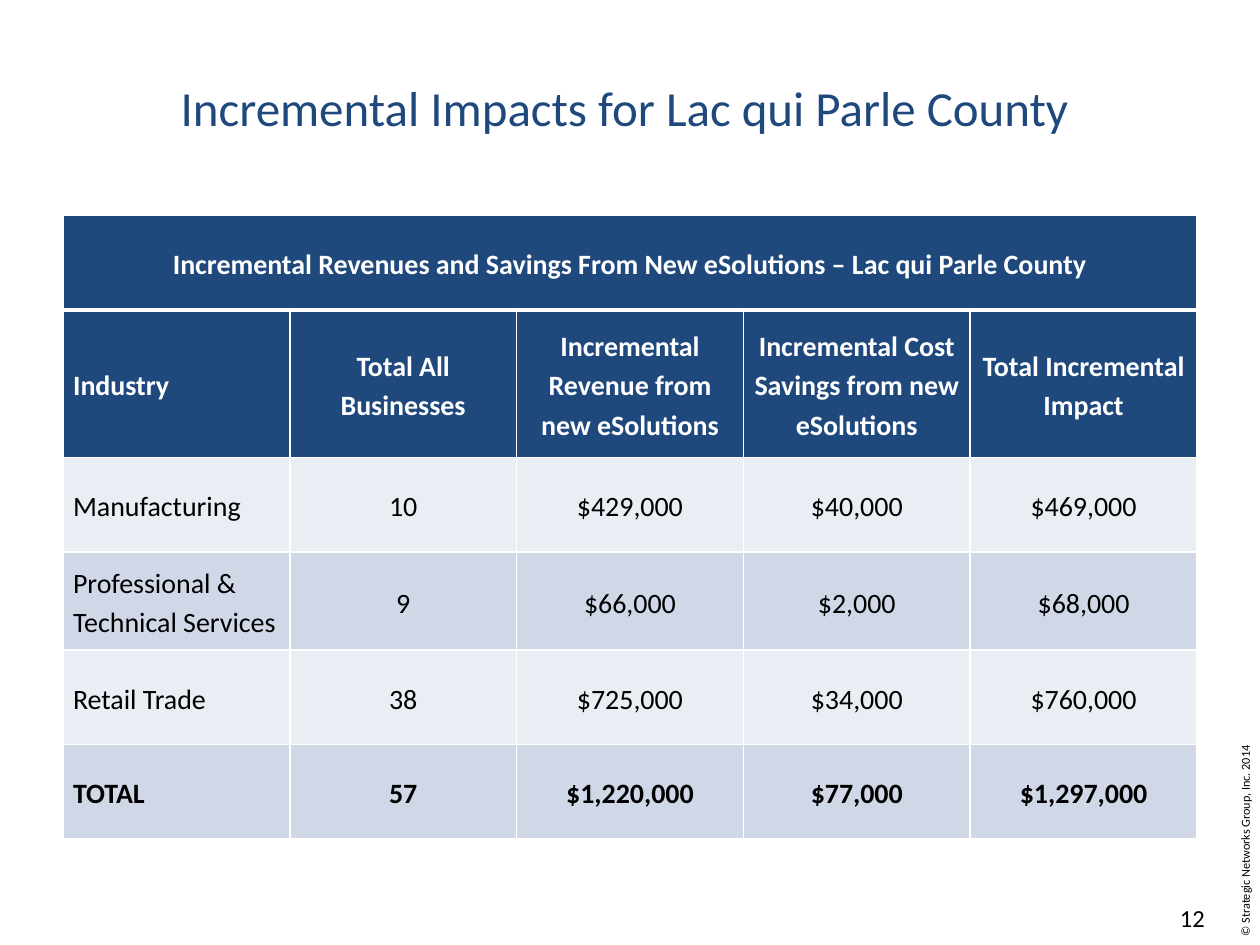
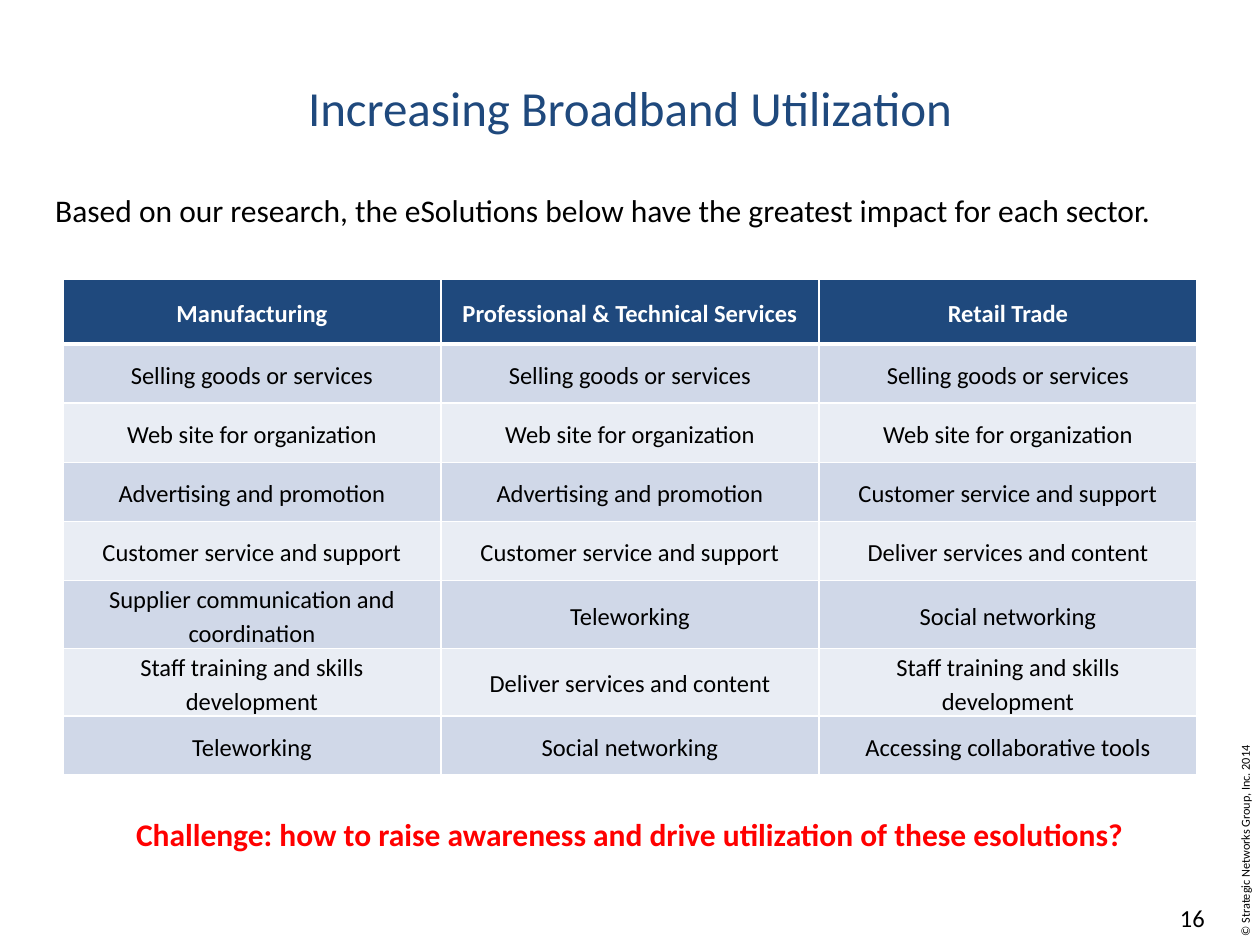
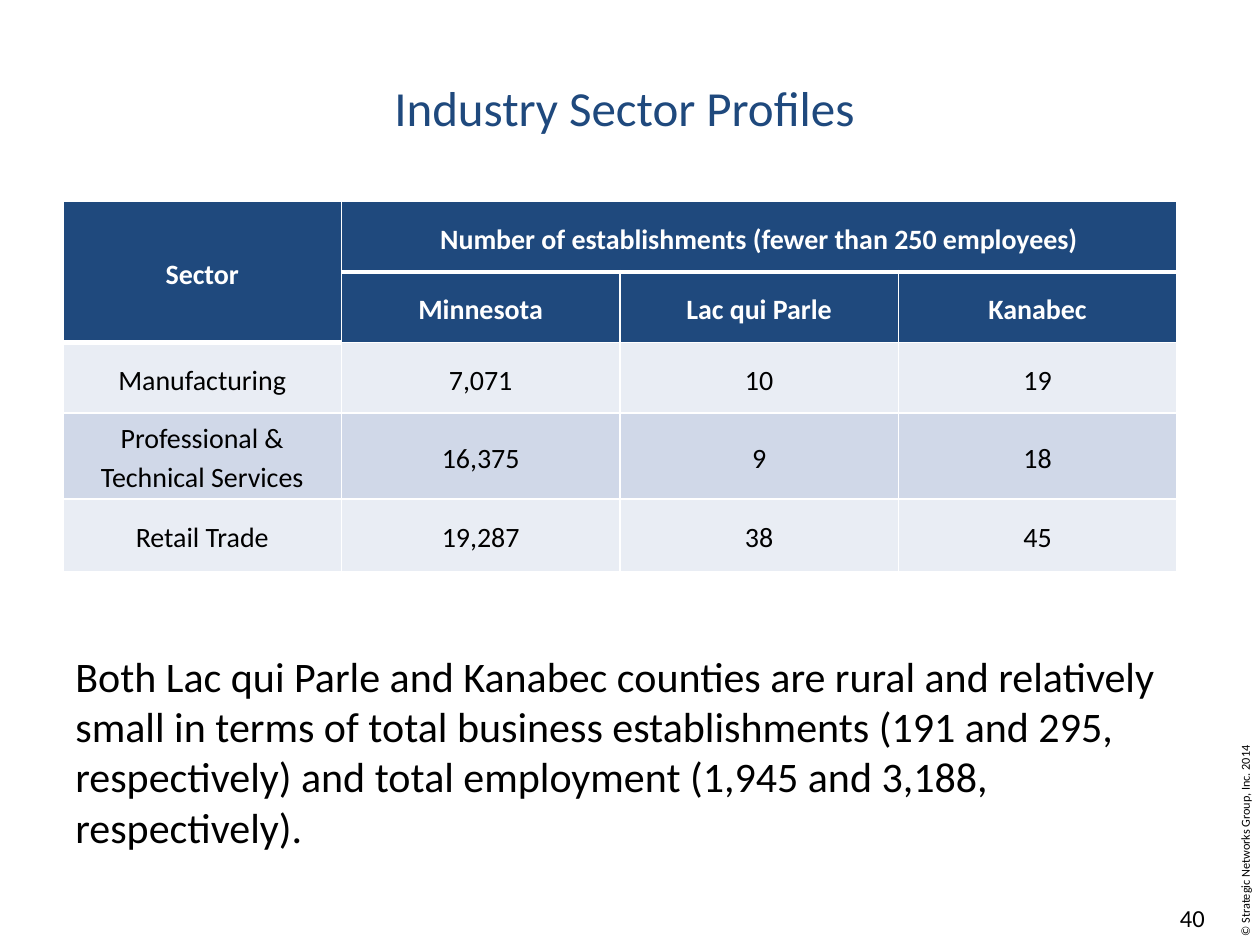
from pptx import Presentation
from pptx.dml.color import RGBColor
from pptx.enum import text as t
from pptx.oxml import parse_xml
from pptx.oxml.ns import nsdecls
from pptx.util import Inches, Pt

NAVY = RGBColor(0x1F, 0x49, 0x7D)
LIGHT = RGBColor(0xE9, 0xED, 0xF4)
DARK = RGBColor(0xD0, 0xD8, 0xE8)
WHITE = RGBColor(0xFF, 0xFF, 0xFF)
BLACK = RGBColor(0, 0, 0)
RED = RGBColor(0xFF, 0, 0)
FONT = "Calibri"
LEFT, MID, RIGHT = t.PP_ALIGN.LEFT, t.PP_ALIGN.CENTER, t.PP_ALIGN.RIGHT


class Deck:
    def __init__(self):
        self.prs = Presentation()
        self.prs.slide_width, self.prs.slide_height = Inches(10), Inches(7.5)
        self.slide = None

    def put(self, frame, words, size, color=BLACK, bold=False, align=LEFT):
        para = frame.paragraphs[0]
        para.alignment = align
        run = para.add_run()
        run.text = words
        font = run.font
        font.name, font.size, font.bold = FONT, Pt(size), bold
        font.color.rgb = color
        return para

    def label(self, words, box, size, wrap=True, **style):
        shape = self.slide.shapes.add_textbox(*map(Inches, box))
        shape.text_frame.word_wrap = wrap
        self.put(shape.text_frame, words, size, **style)
        return shape

    def start(self, title, number):
        """Add a slide with its title, copyright line and number."""
        self.slide = self.prs.slides.add_slide(self.prs.slide_layouts[5])
        head = self.slide.shapes.title
        head.left, head.top = Inches(0.5), Inches(0.47)
        head.width, head.height = Inches(9), Inches(0.75)
        head.text_frame.vertical_anchor = t.MSO_ANCHOR.MIDDLE
        self.put(head.text_frame, title, 28, NAVY, align=MID)

        note = self.label("© Strategic Networks Group, Inc. 2014",
                          (8.99, 6.47, 1.78, 0.26), 7, wrap=False)
        note.rotation = 270
        note.text_frame.margin_left = Inches(0.06)
        note.text_frame.vertical_anchor = t.MSO_ANCHOR.MIDDLE
        self.label(str(number), (7.33, 7.12, 2.33, 0.4), 14, align=RIGHT)

    def edge(self, cell, sides):
        """Draw white cell borders, given as side and width in points."""
        props = cell._tc.get_or_add_tcPr()
        for spot, (side, width) in enumerate(sides):
            props.insert(spot, parse_xml(
                f'<a:ln{side} {nsdecls("a")} w="{Pt(width)}"><a:solidFill>'
                f'<a:srgbClr val="{WHITE}"/></a:solidFill></a:ln{side}>'))

    def table(self, top, width, highs, rows, size, heads=1, spans=(),
              inset=0.07, first=MID, total=False):
        """Add a table; None marks a cell covered by a span."""
        count = len(rows[0])
        grid = self.slide.shapes.add_table(
            len(rows), count, Inches(0.5), Inches(top),
            Inches(width), Inches(sum(highs))).table
        grid.first_row = grid.horz_banding = False
        for col in grid.columns:
            col.width = Inches(width / count)
        for row, high in zip(grid.rows, highs):
            row.height = Inches(high)
        for start, end in spans:
            grid.cell(*start).merge(grid.cell(*end))

        for r, row in enumerate(rows):
            head = r < heads
            bold = head or (total and r == len(rows) - 1)
            for c, words in enumerate(row):
                cell = grid.cell(r, c)
                cell.fill.solid()
                cell.fill.fore_color.rgb = (
                    NAVY if head else DARK if r % 2 else LIGHT)
                thick = r == 0 or cell.is_spanned
                sides = [("L", 1), ("R", 1), ("B", 3 if thick else 1)]
                if r == 0:
                    sides.insert(2, ("T", 1))
                self.edge(cell, sides)
                cell.margin_left = cell.margin_right = Inches(inset)
                cell.margin_top = cell.margin_bottom = 0
                cell.vertical_anchor = t.MSO_ANCHOR.MIDDLE
                if words:
                    align = first if c == 0 and r else MID
                    para = self.put(cell.text_frame, words, size,
                                    WHITE if head else BLACK, bold, align)
                    para.line_spacing = 1.15


def main():
    deck = Deck()

    # Incremental impacts
    deck.start("Incremental Impacts for Lac qui Parle County ", 12)
    deck.table(1.71, 9, [0.75, 1.17, 0.75, 0.78, 0.75, 0.75], [
        ["Incremental Revenues and Savings From New eSolutions – "
         "Lac qui Parle County", None, None, None, None],
        ["Industry", "Total All Businesses",
         "Incremental Revenue from new eSolutions",
         "Incremental Cost Savings from new eSolutions",
         "Total Incremental Impact"],
        ["Manufacturing", "10", "$429,000", "$40,000", "$469,000"],
        ["Professional & Technical Services", "9", "$66,000", "$2,000",
         "$68,000"],
        ["Retail Trade", "38", "$725,000", "$34,000", "$760,000"],
        ["TOTAL", "57", "$1,220,000", "$77,000", "$1,297,000"],
    ], 16, heads=2, spans=[((0, 0), (0, 4))], inset=0.08, first=LEFT,
        total=True)

    # Broadband utilization
    deck.start("Increasing Broadband Utilization", 16)
    deck.table(2.22, 9, [0.51, 0.47, 0.47, 0.47, 0.47, 0.51, 0.51, 0.47], [
        ["Manufacturing", "Professional & Technical Services",
         "Retail Trade"],
        ["Selling goods or services"] * 3,
        ["Web site for organization"] * 3,
        ["Advertising and promotion", "Advertising and promotion",
         "Customer service and support"],
        ["Customer service and support", "Customer service and support",
         "Deliver services and content"],
        ["Supplier communication and coordination", "Teleworking",
         "Social networking"],
        ["Staff training and skills development",
         "Deliver services and content",
         "Staff training and skills development"],
        ["Teleworking", "Social networking",
         "Accessing collaborative tools"],
    ], 14)
    deck.label("Based on our research, the eSolutions below have the greatest "
               "impact for each sector.", (0.34, 1.47, 9.3, 0.4), 18)
    deck.label("Challenge: how to raise awareness and drive utilization of "
               "these esolutions?", (0.5, 6.42, 9, 0.4), 18,
               color=RED, bold=True, align=MID)

    # Sector profiles
    deck.start("Industry Sector Profiles ", 40)
    deck.table(1.6, 8.84, [0.56, 0.56, 0.56, 0.68, 0.58], [
        ["Sector", "Number of establishments (fewer than 250 employees)",
         None, None],
        [None, "Minnesota", "Lac qui Parle", "Kanabec"],
        ["Manufacturing", "7,071", "10", "19"],
        ["Professional & Technical Services", "16,375", "9", "18"],
        ["Retail Trade", "19,287", "38", "45"],
    ], 16, heads=2, spans=[((0, 0), (1, 0)), ((0, 1), (0, 3))])
    deck.label("Both Lac qui Parle and Kanabec counties are rural and "
               "relatively small in terms of total business establishments "
               "(191 and 295, respectively) and total employment (1,945 and "
               "3,188, respectively).", (0.5, 5.11, 9, 1.72), 24)

    deck.prs.save("out.pptx")


if __name__ == "__main__":
    main()
